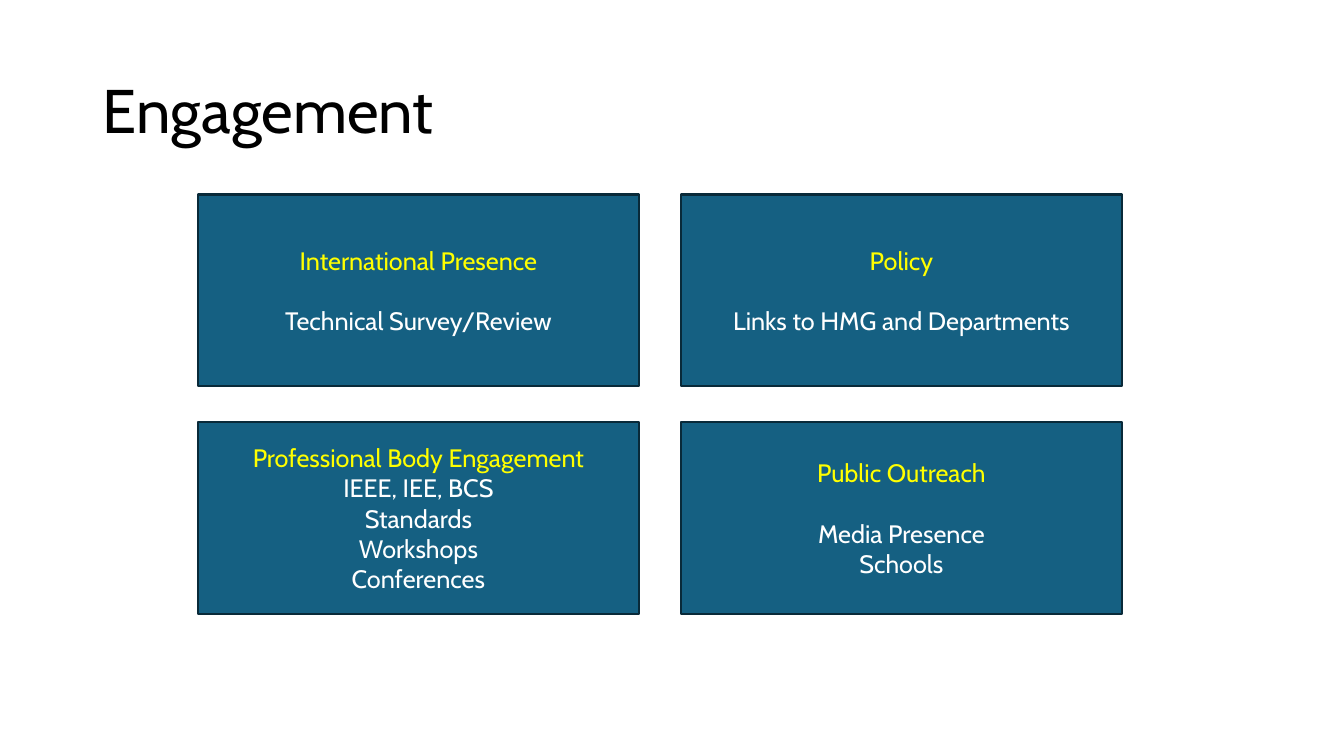
from dataclasses import dataclass

from pptx import Presentation
from pptx.dml.color import RGBColor
from pptx.enum.shapes import MSO_SHAPE
from pptx.enum.text import MSO_ANCHOR, PP_ALIGN
from pptx.util import Inches, Pt

RECTANGLE = MSO_SHAPE.RECTANGLE
MIDDLE = MSO_ANCHOR.MIDDLE
LEFT, CENTER = PP_ALIGN.LEFT, PP_ALIGN.CENTER
TITLE_ONLY = 5


@dataclass(frozen=True)
class Theme:
    font: str = "Cabin"
    title_size: float = 44
    card_size: float = 18
    heading_gap: float = 21.6
    line_width: float = 1.5
    title: str = "000000"
    heading: str = "FFFF00"
    body: str = "FFFFFF"
    fill: str = "156082"
    line: str = "092A39"


THEME = Theme()

# Heading, lines below it, whether the heading is set apart
CARDS = [
    ("International Presence", ["Technical Survey/Review"], True),
    ("Policy", ["Links to HMG and Departments"], True),
    ("Professional Body Engagement",
     ["IEEE, IEE, BCS", "Standards", "Workshops", "Conferences"], False),
    ("Public Outreach", ["Media Presence", "Schools"], True),
]


def add_run(p, text, size, color):
    r = p.add_run()
    r.text = text
    r.font.name = THEME.font
    r.font.size = Pt(size)
    r.font.color.rgb = RGBColor.from_string(color)


def place_title(slide, text, left, top, width, height):
    sp = slide.shapes.title
    sp.left, sp.top = Inches(left), Inches(top)
    sp.width, sp.height = Inches(width), Inches(height)
    tf = sp.text_frame
    tf.vertical_anchor = MIDDLE
    p = tf.paragraphs[0]
    p.alignment = LEFT
    p.line_spacing = 0.9
    add_run(p, text, THEME.title_size, THEME.title)


def add_card(slide, heading, lines, spaced, left, top, width, height):
    sp = slide.shapes.add_shape(RECTANGLE, Inches(left), Inches(top),
                                Inches(width), Inches(height))
    sp.shadow.inherit = False
    sp.fill.solid()
    sp.fill.fore_color.rgb = RGBColor.from_string(THEME.fill)
    sp.line.color.rgb = RGBColor.from_string(THEME.line)
    sp.line.width = Pt(THEME.line_width)
    tf = sp.text_frame
    tf.word_wrap = True
    tf.vertical_anchor = MIDDLE
    p = tf.paragraphs[0]
    p.alignment = CENTER
    add_run(p, heading, THEME.card_size, THEME.heading)
    for i, line in enumerate(lines):
        p = tf.add_paragraph()
        p.alignment = CENTER
        if spaced and i == 0:
            p.space_before = Pt(THEME.heading_gap)
        add_run(p, line, THEME.card_size, THEME.body)


def add_card_grid(slide, cards, left, top, width, height):
    columns, gap_x, gap_y = 2, 0.41, 0.36
    rows = len(cards) // columns
    card_w = (width - gap_x * (columns - 1)) / columns
    card_h = (height - gap_y * (rows - 1)) / rows
    for i, (heading, lines, spaced) in enumerate(cards):
        row, col = divmod(i, columns)
        add_card(slide, heading, lines, spaced,
                 left + col * (card_w + gap_x), top + row * (card_h + gap_y),
                 card_w, card_h)


def main():
    prs = Presentation()
    prs.slide_width, prs.slide_height = Inches(13.33), Inches(7.5)
    slide = prs.slides.add_slide(prs.slide_layouts[TITLE_ONLY])
    place_title(slide, "Engagement", 0.92, 0.4, 11.5, 1.45)
    add_card_grid(slide, CARDS, 1.96, 1.93, 9.17, 4.16)
    prs.save("out.pptx")


if __name__ == "__main__":
    main()
